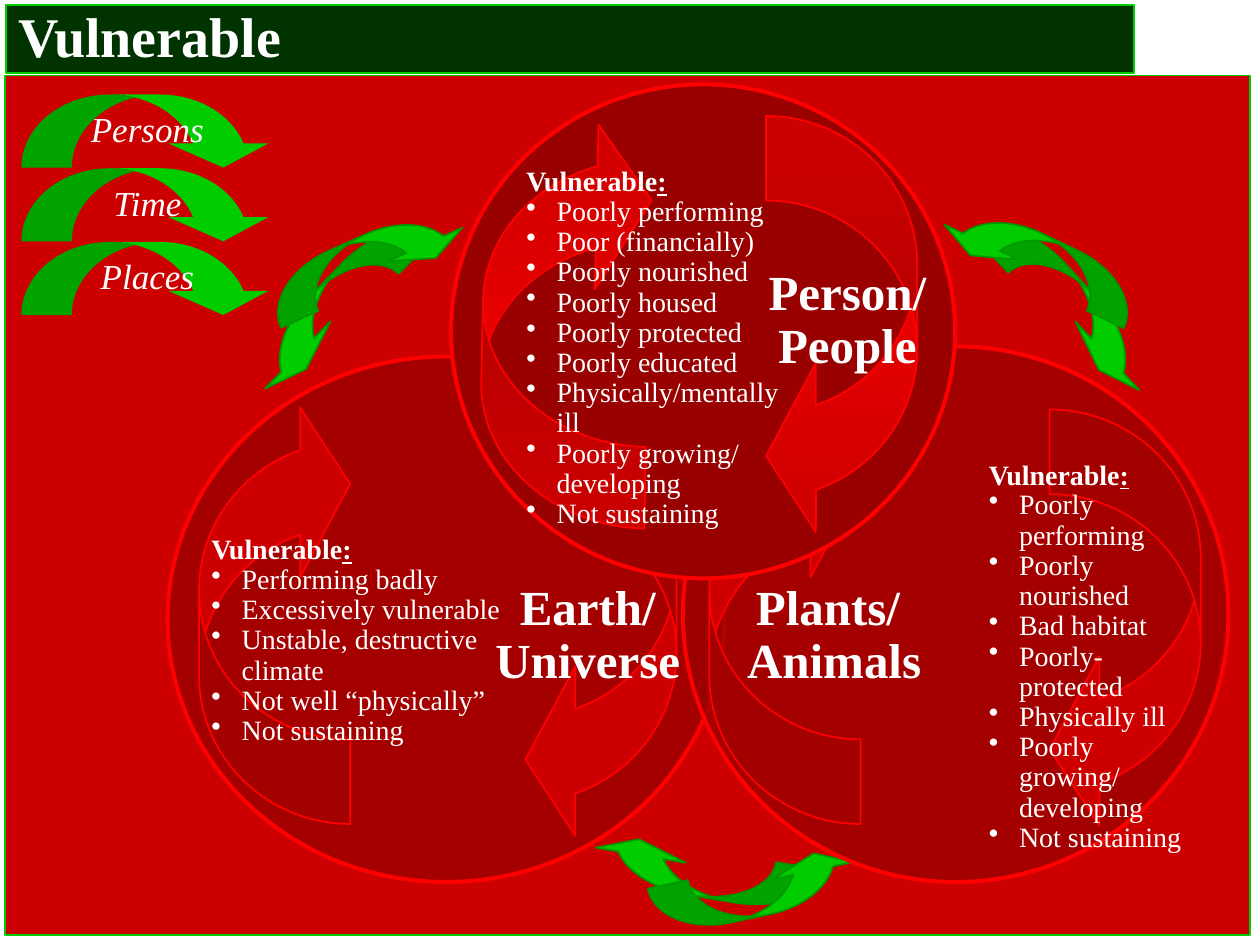
from lxml import etree
from pptx import Presentation
from pptx.dml.color import RGBColor
from pptx.enum.shapes import MSO_SHAPE as Shape
from pptx.enum.text import MSO_ANCHOR as Anchor, MSO_AUTO_SIZE as AutoSize, PP_ALIGN as Align
from pptx.oxml.ns import qn
from pptx.util import Inches, Pt

WHITE = RGBColor(0xFF, 0xFF, 0xFF)
DARK_GREEN = RGBColor(0x00, 0x33, 0x00)
GREEN = RGBColor(0x00, 0xCC, 0x00)
MID_GREEN = RGBColor(0x00, 0x99, 0x00)
RED = RGBColor(0xCC, 0x00, 0x00)
BRIGHT_RED = RGBColor(0xFF, 0x00, 0x00)
DARK_RED = RGBColor(0x99, 0x00, 0x00)
FONT = "Times New Roman"
BULLET_INDENT = 0.24

# Content: places are (left, top, width, height) in inches
TITLE = "Vulnerable"
HEADING = "Vulnerable"
TAGS = ["Persons", "Time", "Places"]

WIDE_ARROW = (0.98, 1.96, 0.33)
SLIM_ARROW = (0.81, 1.62, 0.33)
RING_ARROW = (0.56, 1.12, 0.33)
LINK_ARROWS = [  # place, rotation, flips, adjustments
    ((5.4, 6.02, 0.37, 1.83), 279.5, "HV", WIDE_ARROW),
    ((5.8, 6.24, 0.4, 1.67), 258, "H", SLIM_ARROW),
    ((8.31, 1.52, 0.38, 1.8), 137, "HV", WIDE_ARROW),
    ((8.05, 1.23, 0.4, 1.67), 115.4, "H", SLIM_ARROW),
    ((2.47, 1.52, 0.38, 1.8), 224.2, "V", WIDE_ARROW),
    ((2.71, 1.24, 0.4, 1.67), 245.7, "", SLIM_ARROW),
]

EARTH = {
    "circle": (1.33, 2.83, 4.42, 4.17), "alpha": 75, "gradient": False,
    "arrows": [((4.17, 3.33, 1.2, 3.37), 0, "", RING_ARROW),
               ((1.58, 3.17, 1.2, 3.37), 0, "HV", RING_ARROW)],
    "label": ["Earth/", "Universe"], "label_place": (3.83, 4.58, 1.67, 0.94),
    "list_place": (1.58, 4.17, 2.5, 1.82),
    "points": ["Performing badly", "Excessively vulnerable",
               "Unstable, destructive climate", "Not well “physically”",
               "Not sustaining"],
}
PLANTS = {
    "circle": (5.42, 2.75, 4.33, 4.25), "alpha": 75, "gradient": False,
    "arrows": [((8.33, 3.25, 1.2, 3.37), 0, "", RING_ARROW),
               ((5.63, 3.17, 1.2, 3.37), 0, "HV", RING_ARROW)],
    "label": ["Plants/ ", "Animals"], "label_place": (5.83, 4.58, 1.58, 0.94),
    "list_place": (7.75, 3.58, 1.83, 2.54),
    "points": ["Poorly performing", "Poorly nourished", "Bad habitat",
               "Poorly-protected", "Physically ill",
               "Poorly growing/ developing", "Not sustaining"],
}
PEOPLE = {
    "circle": (3.58, 0.67, 4, 3.92), "alpha": 100, "gradient": True,
    "arrows": [((6.08, 0.92, 1.2, 3.37), 0, "", RING_ARROW),
               ((3.83, 0.92, 1.32, 3.26), 181.3, "", (0.49, 0.99, 0.33))],
    "label": ["Person/", "People"], "label_place": (6, 2.08, 1.45, 0.94),
    "list_place": (4.08, 1.25, 2.33, 2.78),
    "points": ["Poorly performing", "Poor (financially)", "Poorly nourished",
               "Poorly housed", "Poorly protected", "Poorly educated",
               "Physically/mentally ill", "Poorly growing/ developing",
               "Not sustaining"],
}


def add_shape(shapes, kind, place, fill, line=None, line_width=1):
    shape = shapes.add_shape(kind, *map(Inches, place))
    shape.shadow.inherit = False
    shape.fill.solid()
    shape.fill.fore_color.rgb = fill
    if line is None:
        shape.line.fill.background()
    else:
        shape.line.color.rgb = line
        shape.line.width = Pt(line_width)
    return shape


def add_arrow(shapes, place, rotation, flips, adjustments, fill, line):
    arrow = add_shape(shapes, Shape.CURVED_LEFT_ARROW, place, fill, line)
    arrow.rotation = rotation
    for axis in flips:
        arrow.element.spPr.xfrm.set("flip" + axis, "1")
    set_adjustments(arrow, adjustments)
    return arrow


def set_adjustments(shape, values):
    for index, value in enumerate(values):
        shape.adjustments[index] = value


def set_frame(shape, **values):
    frame = shape.text_frame
    for name, value in values.items():
        setattr(frame, name, value)
    return frame


def add_run(paragraph, text, **formats):
    run = paragraph.add_run()
    run.text = text
    run.font.color.rgb = WHITE
    for name, value in {"name": FONT, **formats}.items():
        setattr(run.font, name, value)


def add_lines(frame, lines, align, **formats):
    for index, text in enumerate(lines):
        paragraph = frame.add_paragraph() if index else frame.paragraphs[0]
        paragraph.alignment = align
        paragraph.line_spacing = 0.9
        add_run(paragraph, text, **formats)


def add_bullet(paragraph):
    properties = paragraph._p.get_or_add_pPr()
    properties.set("marL", str(Inches(BULLET_INDENT)))
    properties.set("indent", str(-Inches(BULLET_INDENT)))
    etree.SubElement(properties, qn("a:buChar")).set("char", "•")


def add_circle(slide, topic):
    shapes = slide.shapes.add_group_shape().shapes
    circle = add_shape(shapes, Shape.OVAL, topic["circle"], DARK_RED, BRIGHT_RED, 2.25)
    if topic["alpha"] < 100:
        color = circle.element.spPr.find(qn("a:solidFill"))[0]
        etree.SubElement(color, qn("a:alpha")).set("val", str(topic["alpha"] * 1000))

    for arrow_data in topic["arrows"]:
        arrow = add_arrow(shapes, *arrow_data, RED, BRIGHT_RED)
        if topic["gradient"]:
            arrow.fill.gradient()
            arrow.fill.gradient_angle = 270
            for stop, color in zip(arrow.fill.gradient_stops, (BRIGHT_RED, RED)):
                stop.color.rgb = color

    # Vulnerability list
    box = shapes.add_textbox(*map(Inches, topic["list_place"]))
    frame = set_frame(box, word_wrap=True, auto_size=AutoSize.SHAPE_TO_FIT_TEXT)
    heading = frame.paragraphs[0]
    add_run(heading, HEADING, size=Pt(16), bold=True)
    add_run(heading, ":", size=Pt(16), bold=True, underline=True)
    for text in topic["points"]:
        paragraph = frame.add_paragraph()
        paragraph.line_spacing = 0.9
        add_bullet(paragraph)
        add_run(paragraph, text, size=Pt(16))

    # Circle name
    label = shapes.add_textbox(*map(Inches, topic["label_place"]))
    frame = set_frame(label, word_wrap=False, auto_size=AutoSize.SHAPE_TO_FIT_TEXT)
    add_lines(frame, topic["label"], Align.CENTER, size=Pt(28), bold=True)


def add_tags(slide):
    for index, text in enumerate(TAGS):
        place = (0.17, 0.75 + index * 0.585, 2, 0.58)
        tag = add_shape(slide.shapes, Shape.CURVED_DOWN_ARROW, place, GREEN)
        set_adjustments(tag, (0.69, 1.37, 0.33))
        frame = set_frame(tag, word_wrap=False, vertical_anchor=Anchor.MIDDLE)
        add_lines(frame, [text], Align.CENTER, size=Pt(20), italic=True)


def main():
    presentation = Presentation()
    presentation.slide_width, presentation.slide_height = Inches(10), Inches(7.5)
    slide = presentation.slides.add_slide(presentation.slide_layouts[6])

    # Title bar and red panel
    bar = add_shape(slide.shapes, Shape.RECTANGLE, (0.05, 0.04, 8.95, 0.54), DARK_GREEN, GREEN)
    frame = set_frame(bar, word_wrap=True, vertical_anchor=Anchor.MIDDLE,
                      auto_size=AutoSize.SHAPE_TO_FIT_TEXT,
                      margin_top=Inches(0.03), margin_bottom=Inches(0.02))
    add_lines(frame, [TITLE], Align.LEFT, size=Pt(32), bold=True)
    add_shape(slide.shapes, Shape.RECTANGLE, (0.04, 0.6, 9.88, 6.82), RED, GREEN)

    # Arrows between the circles, then the circles from back to front
    links = slide.shapes.add_group_shape().shapes
    for arrow_data in LINK_ARROWS:
        add_arrow(links, *arrow_data, GREEN, MID_GREEN)
    add_circle(slide, EARTH)
    add_circle(slide, PLANTS)
    add_tags(slide)
    add_circle(slide, PEOPLE)
    presentation.save("out.pptx")


if __name__ == "__main__":
    main()
